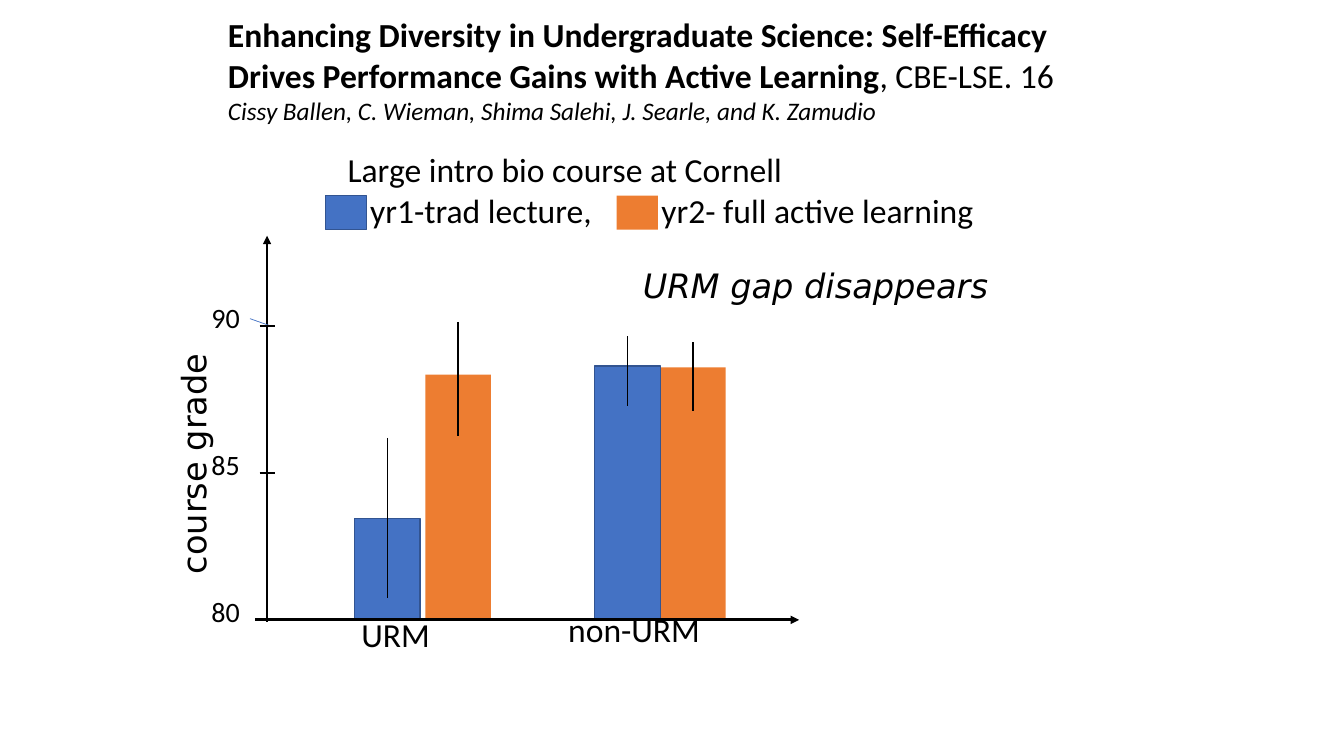
from dataclasses import dataclass

from lxml.etree import SubElement
from pptx import Presentation
from pptx.dml.color import RGBColor
from pptx.enum.shapes import MSO_CONNECTOR, MSO_SHAPE
from pptx.enum.text import MSO_ANCHOR, MSO_AUTO_SIZE, PP_ALIGN
from pptx.oxml.ns import qn
from pptx.shapes.autoshape import Shape
from pptx.shapes.connector import Connector
from pptx.slide import Slide
from pptx.util import Cm, Pt

COLORS = {
    "text": "000000",
    "lecture": "4472C4",
    "lecture edge": "325491",
    "active": "ED7D31",
}
BASE_GRADE = 80
BASE_Y = 15.62
CM_PER_GRADE = 0.74
BAR_WIDTH = 1.65


@dataclass(frozen=True)
class Bar:
    course: str
    left: float
    grade: float
    low: float
    high: float
    error_width: float = 1


@dataclass(frozen=True)
class Label:
    text: str
    left: float
    top: float
    width: float
    height: float = 1.27
    size: int = 24
    font: str = "Calibri"
    italic: bool = False
    rotation: int = 0


@dataclass(frozen=True)
class Line:
    start: tuple[float, float]
    end: tuple[float, float]
    width: float = 1
    color: str = "text"
    arrow: bool = False


@dataclass(frozen=True)
class LegendKey:
    course: str
    text: str
    left: float
    text_width: float


BARS = [
    Bar("active", 16.64, 88.6, 87.1, 89.45, 1.5),
    Bar("lecture", 14.99, 88.65, 87.3, 89.65),
    Bar("active", 10.72, 88.35, 86.25, 90.15),
    Bar("lecture", 8.94, 83.45, 80.75, 86.2),
]
LEGEND = [
    LegendKey("lecture", "yr1-trad lecture,", 8.2, 6.5),
    LegendKey("active", "yr2- full active learning", 15.54, 10),
]
LABELS = [
    Label("Large intro bio course at Cornell", 8.51, 3.63, 14),
    Label("URM", 8.86, 15.34, 2.4),
    Label("non-URM", 14.07, 15.21, 4.2),
    Label("course grade", 1.83, 11.05, 6.07, font="DejaVu Sans", rotation=270),
    Label("URM gap disappears", 15.95, 6.55, 10, font="DejaVu Sans", italic=True),
]
AXES = [
    Line((6.43, BASE_Y), (20.14, BASE_Y), 2, arrow=True),
    Line((6.73, 15.67), (6.73, 5.94), 1.5, arrow=True),
    Line((6.3, 8.03), (6.78, 8.2), 0.5, "lecture"),
]


def color(name: str) -> RGBColor:
    return RGBColor.from_string(COLORS[name])


def grade_y(grade: float) -> float:
    """Vertical place, in cm, of a grade on the axis."""
    return BASE_Y - (grade - BASE_GRADE) * CM_PER_GRADE


def add_rectangle(slide: Slide, course: str, left: float, top: float,
                  width: float, height: float) -> Shape:
    rectangle = slide.shapes.add_shape(
        MSO_SHAPE.RECTANGLE, Cm(left), Cm(top), Cm(width), Cm(height))
    rectangle.shadow.inherit = False
    rectangle.fill.solid()
    rectangle.fill.fore_color.rgb = color(course)
    if course == "lecture":
        rectangle.line.color.rgb = color("lecture edge")
        rectangle.line.width = Pt(1)
    else:
        rectangle.line.fill.background()
    return rectangle


def add_line(slide: Slide, line: Line) -> Connector:
    connector = slide.shapes.add_connector(
        MSO_CONNECTOR.STRAIGHT, *(Cm(n) for n in line.start + line.end))
    connector.line.color.rgb = color(line.color)
    connector.line.width = Pt(line.width)
    if line.arrow:
        SubElement(connector.line._get_or_add_ln(), qn("a:tailEnd"), type="triangle")
    SubElement(connector._element.spPr, qn("a:effectLst"))
    return connector


def add_label(slide: Slide, label: Label) -> Shape:
    box = slide.shapes.add_textbox(
        Cm(label.left), Cm(label.top), Cm(label.width), Cm(label.height))
    box.rotation = label.rotation
    box.text_frame.word_wrap = True
    paragraph = box.text_frame.paragraphs[0]
    paragraph.text = label.text
    font = paragraph.font
    font.name, font.size, font.italic = label.font, Pt(label.size), label.italic
    font.color.rgb = color("text")
    return box


def fill_title(slide: Slide) -> None:
    title = slide.shapes.title
    title.left, title.top, title.width, title.height = Cm(5.49), Cm(0.23), Cm(22.91), Cm(3.07)
    frame = title.text_frame
    frame.word_wrap = True
    frame.auto_size = MSO_AUTO_SIZE.NONE
    frame.vertical_anchor = MSO_ANCHOR.TOP
    paper, authors = frame.paragraphs[0], frame.add_paragraph()
    name = paper.add_run()
    name.text = ("Enhancing Diversity in Undergraduate Science: Self-Efficacy "
                 "Drives Performance Gains with Active Learning")
    name.font.bold = True
    paper.add_run().text = ", CBE-LSE. 16"
    authors.text = "Cissy Ballen, C. Wieman, Shima Salehi, J. Searle, and K. Zamudio"
    authors.font.italic = True
    for paragraph, size in ((paper, 24), (authors, 18)):
        paragraph.alignment = PP_ALIGN.LEFT
        paragraph.line_spacing = 1.0
        paragraph.space_before = Pt(0)
        paragraph.font.name, paragraph.font.size = "Calibri", Pt(size)
        paragraph.font.color.rgb = color("text")


def add_legend(slide: Slide) -> None:
    for key in LEGEND:
        add_rectangle(slide, key.course, key.left, 4.93, 1.04, 0.86)
        add_label(slide, Label(key.text, key.left + 0.88, 4.66, key.text_width))


def add_bars(slide: Slide) -> None:
    for bar in BARS:
        top = grade_y(bar.grade)
        add_rectangle(slide, bar.course, bar.left, top, BAR_WIDTH, BASE_Y - top)
    for bar in BARS:
        center = bar.left + BAR_WIDTH / 2
        add_line(slide, Line((center, grade_y(bar.high)), (center, grade_y(bar.low)),
                             bar.error_width))


def add_axes(slide: Slide) -> None:
    for axis in AXES:
        add_line(slide, axis)
    for grade in (80, 85, 90):
        y = grade_y(grade)
        add_label(slide, Label(str(grade), 5.08, y - 0.77, 1.4, 1.12, 20))
        if grade > BASE_GRADE:
            add_line(slide, Line((6.54, y), (6.94, y)))


def main() -> None:
    presentation = Presentation()
    presentation.slide_width, presentation.slide_height = Cm(33.87), Cm(19.05)
    slide = presentation.slides.add_slide(presentation.slide_layouts[5])
    fill_title(slide)
    add_legend(slide)
    add_bars(slide)
    add_axes(slide)
    for label in LABELS:
        add_label(slide, label)
    presentation.save("out.pptx")


if __name__ == "__main__":
    main()
